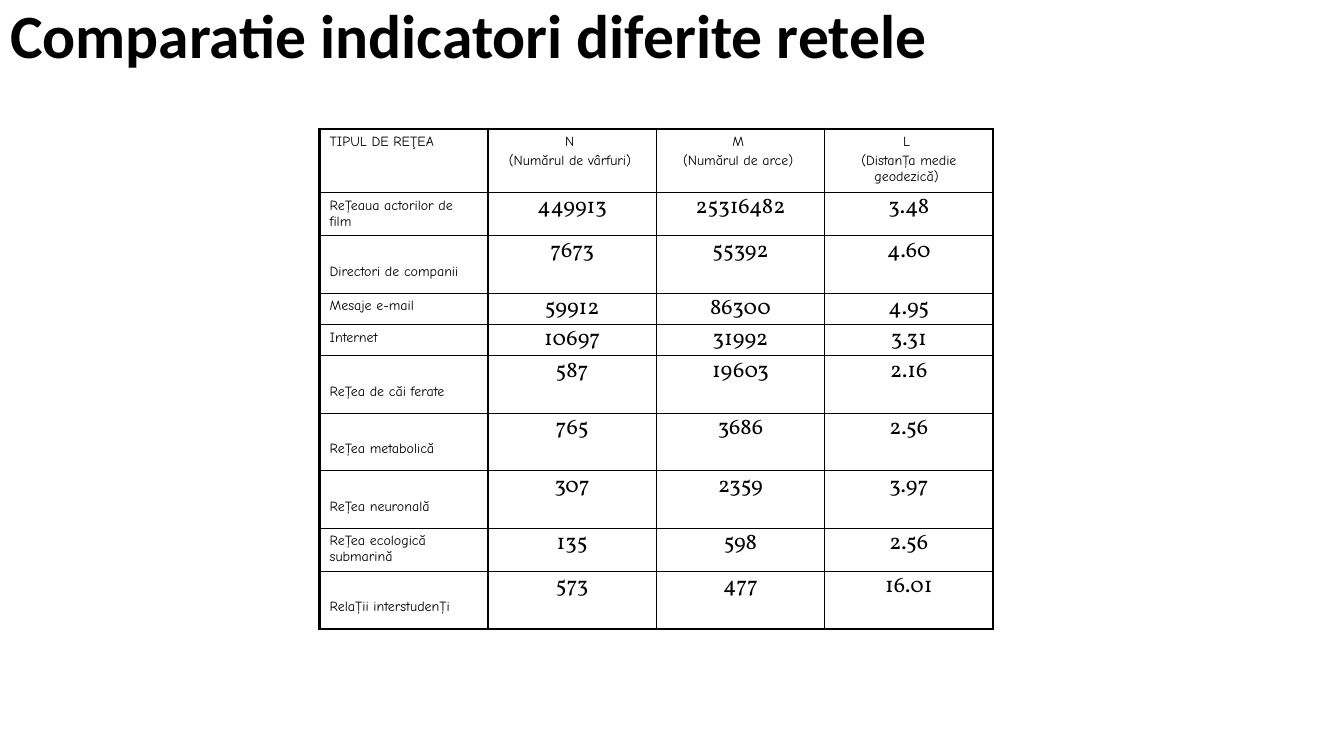
from lxml import etree
from pptx import Presentation
from pptx import util as u
from pptx.dml.color import RGBColor
from pptx.enum import text
from pptx.oxml import ns

PX = 9144
BLACK = RGBColor(0, 0, 0)
TITLE_FONT, LABEL_FONT, NUMBER_FONT = "Calibri", "Comic Neue", "Vollkorn"
THIN, THICK = 1, 2.25
COLUMN_WIDTH = 167
HEADER_HEIGHT, SINGLE, DOUBLE, TALL = 63, 31, 43, 57
HEADERS = [
    "TIPUL DE REŢEA",
    "N \n(Numărul de vârfuri) ",
    "M \n(Numărul de arce) ",
    "L \n(Distanţa medie geodezică) ",
]
NETWORKS = [
    (DOUBLE, "Reţeaua actorilor de film", "449913", "25316482", "3.48"),
    (TALL, "Directori de companii", "7673", "55392", "4.60"),
    (SINGLE, "Mesaje e-mail", "59912", "86300", "4.95"),
    (SINGLE, "Internet", "10697", "31992", "3.31"),
    (TALL, "Reţea de căi ferate", "587", "19603", "2.16"),
    (TALL, "Reţea metabolică", "765", "3686", "2.56"),
    (TALL, "Reţea neuronală", "307", "2359", "3.97"),
    (DOUBLE, "Reţea ecologică submarină", "135", "598", "2.56"),
    (TALL, "Relaţii interstudenţi", "573", "477", "16.01"),
]


def px(length):
    return u.Emu(length * PX)


def format_run(run, font, size, bold=False):
    run.font.name = font
    run.font.size = u.Pt(size)
    run.font.bold = bold
    run.font.color.rgb = BLACK


def set_space_before(paragraph, percent):
    properties = paragraph._p.get_or_add_pPr()
    spacing = etree.SubElement(properties, ns.qn("a:spcBef"))
    etree.SubElement(spacing, ns.qn("a:spcPct"), val=str(percent * 1000))


def set_borders(cell, widths):
    properties = cell._tc.get_or_add_tcPr()
    for side, width in zip("LRTB", widths):
        line = etree.SubElement(properties, ns.qn(f"a:ln{side}"), w=str(u.Pt(width)))
        fill = etree.SubElement(line, ns.qn("a:solidFill"))
        etree.SubElement(fill, ns.qn("a:srgbClr"), val=str(BLACK))


def set_margins(cell, horizontal, vertical):
    cell.margin_left = cell.margin_right = px(horizontal)
    cell.margin_top = cell.margin_bottom = px(vertical)


def fill_label(cell, label, centred, tall):
    set_margins(cell, 10, 5)
    cell.text_frame.text = label
    for paragraph in cell.text_frame.paragraphs:
        paragraph.alignment = text.PP_ALIGN.CENTER if centred else text.PP_ALIGN.LEFT
        set_space_before(paragraph, 20)
        format_run(paragraph.runs[0], LABEL_FONT, 10)
        if tall:
            spacer = paragraph.add_run()
            spacer.text = " "
            format_run(spacer, LABEL_FONT, 28)


def fill_number(cell, number):
    set_margins(cell, 7, 0)
    cell.text_frame.text = number
    paragraph = cell.text_frame.paragraphs[0]
    paragraph.alignment = text.PP_ALIGN.CENTER
    format_run(paragraph.runs[0], NUMBER_FONT, 16)


def add_title(slide, title):
    shape = slide.shapes.title
    shape.left, shape.top, shape.width, shape.height = map(px, (0, 0, 1150, 77))
    frame = shape.text_frame
    frame.text = title
    frame.auto_size = text.MSO_AUTO_SIZE.NONE
    frame.vertical_anchor = text.MSO_ANCHOR.MIDDLE
    paragraph = frame.paragraphs[0]
    paragraph.alignment = text.PP_ALIGN.LEFT
    paragraph.line_spacing = 0.9
    format_run(paragraph.runs[0], TITLE_FONT, 44, bold=True)


def add_network_table(slide):
    rows = [(HEADER_HEIGHT, *HEADERS), *NETWORKS]
    last_row, last_column = len(rows) - 1, len(HEADERS) - 1
    total_height = sum(row[0] for row in rows)
    table = slide.shapes.add_table(
        len(rows), len(HEADERS), px(317), px(128),
        px(COLUMN_WIDTH * len(HEADERS)), px(total_height),
    ).table
    table.first_row = table.horz_banding = False
    for column in table.columns:
        column.width = px(COLUMN_WIDTH)
    for i, (height, *values) in enumerate(rows):
        table.rows[i].height = px(height)
        for j, value in enumerate(values):
            cell = table.cell(i, j)
            outer = (j == 0, j == last_column, i == 0, i == last_row)
            set_borders(cell, [THICK if edge else THIN for edge in outer])
            cell.fill.background()
            if i == 0 or j == 0:
                fill_label(cell, value, centred=j > 0, tall=height == TALL)
            else:
                fill_number(cell, value)


def main():
    presentation = Presentation()
    presentation.slide_width, presentation.slide_height = px(1333), px(750)
    slide = presentation.slides.add_slide(presentation.slide_layouts[5])
    add_title(slide, "Comparatie indicatori diferite retele")
    add_network_table(slide)
    presentation.save("out.pptx")


if __name__ == "__main__":
    main()
